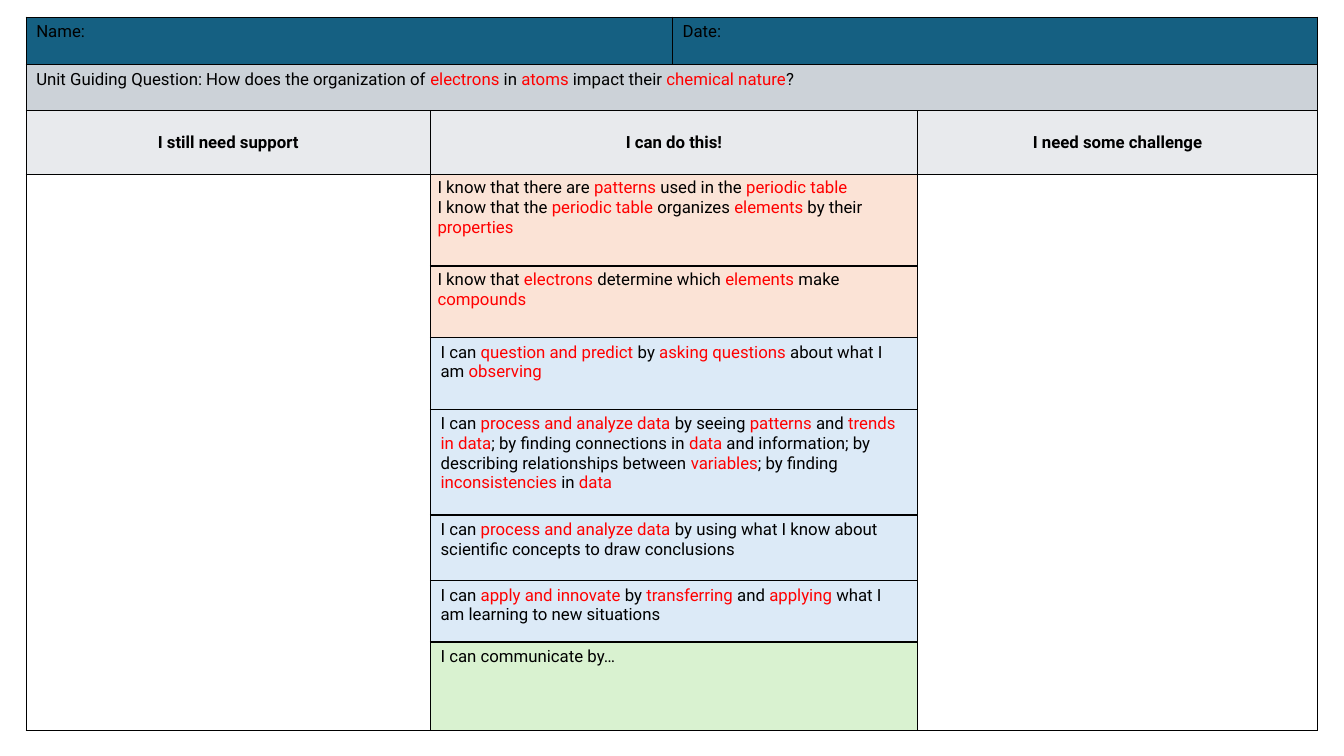
from dataclasses import dataclass

from lxml import etree
from pptx import Presentation
from pptx import util as u
from pptx.dml.color import RGBColor
from pptx.enum import text
from pptx.oxml import ns

WIDE, HIGH = 13.33, 7.5
LEFT, TOP = 0.26, 0.17
COLS = [4.01, 2.4, 2.43, 3.97]
ROWS = [0.47, 0.46, 0.63, 0.91, 0.71, 0.71, 1.05, 0.65, 0.61, 0.88]
FONT, SIZE = "Roboto", 12
BLACK, RED, WHITE = "000000", "FF0000", "FFFFFF"
BLUE, GREY, PALE = "156082", "CCD2D8", "E8EAED"
PEACH, SKY, GREEN = "FBE3D6", "DCEAF7", "D9F2D0"


@dataclass
class Box:
    """A table cell; words between asterisks are key terms in red."""
    row: int
    col: int
    fill: str
    words: str = ""
    tall: int = 1
    wide: int = 1
    head: bool = False
    tight: bool = False


# Middle column, from the first goal down
GOALS = [
    (PEACH, "I know that there are *patterns* used in the *periodic table*\n"
            "I know that the *periodic table *organizes *elements* by their *properties*"),
    (PEACH, "I know that *electrons* determine which *elements* make *compounds*"),
    (SKY, "I can *question and predict *by *asking questions *about what I am *observing*"),
    (SKY, "I can *process and analyze data *by seeing *patterns* and *trends in data*; "
          "by finding connections in *data* and information; by describing relationships "
          "between *variables*; by finding *inconsistencies* in *data*"),
    (SKY, "I can *process and analyze data* by using what I know about "
          "scientific concepts to draw conclusions"),
    (SKY, "I can *apply and innovate *by *transferring* and* applying *"
          "what I am learning to new situations"),
    (GREEN, "I can communicate by…"),
]
FIRST = len(ROWS) - len(GOALS)

BOXES = [
    Box(0, 0, BLUE, "Name:", wide=2),
    Box(0, 2, BLUE, "Date:", wide=2),
    Box(1, 0, GREY, "Unit Guiding Question: How does the organization of *electrons* in "
                    "*atoms* impact their *chemical nature*?", wide=4),
    Box(2, 0, PALE, "I still need support", head=True),
    Box(2, 1, PALE, "I can do this!", wide=2, head=True),
    Box(2, 3, PALE, "I need some challenge", head=True),
    Box(FIRST, 0, WHITE, tall=len(GOALS)),
    Box(FIRST, 3, WHITE, tall=len(GOALS)),
] + [Box(FIRST + i, 1, fill, words, wide=2, tight=fill == PEACH)
     for i, (fill, words) in enumerate(GOALS)]


def tint(code: str) -> RGBColor:
    return RGBColor.from_string(code)


def edge(cell) -> None:
    """Put a thin black line on all four sides."""
    props = cell._tc.get_or_add_tcPr()
    for side in ("lnL", "lnR", "lnT", "lnB"):
        line = etree.SubElement(props, ns.qn(f"a:{side}"), w=str(u.Pt(1)))
        paint = etree.SubElement(line, ns.qn("a:solidFill"))
        etree.SubElement(paint, ns.qn("a:srgbClr"), val=BLACK)


def write(cell, box: Box) -> None:
    frame = cell.text_frame
    for i, line in enumerate(box.words.split("\n")):
        para = frame.add_paragraph() if i else frame.paragraphs[0]
        para.font.name, para.font.size = FONT, u.Pt(SIZE)
        para.font.bold = box.head
        if box.head:
            para.alignment = text.PP_ALIGN.CENTER
        for j, part in enumerate(line.split("*")):
            if part:
                run = para.add_run()
                run.text = part
                run.font.color.rgb = tint(RED if j % 2 else BLACK)


def draw(table, box: Box) -> None:
    cell = table.cell(box.row, box.col)
    if box.tall > 1 or box.wide > 1:
        cell.merge(table.cell(box.row + box.tall - 1, box.col + box.wide - 1))
    cell.fill.solid()
    cell.fill.fore_color.rgb = tint(box.fill)
    if box.head:
        cell.vertical_anchor = text.MSO_ANCHOR.MIDDLE
    if box.tight:
        cell.margin_left = cell.margin_right = u.Inches(0.07)
        cell.margin_top = cell.margin_bottom = u.Inches(0.04)
    write(cell, box)


def main() -> None:
    deck = Presentation()
    deck.slide_width, deck.slide_height = u.Inches(WIDE), u.Inches(HIGH)
    slide = deck.slides.add_slide(deck.slide_layouts[6])

    # Grid
    table = slide.shapes.add_table(
        len(ROWS), len(COLS), u.Inches(LEFT), u.Inches(TOP),
        u.Inches(sum(COLS)), u.Inches(sum(ROWS))).table
    table.first_row = table.horz_banding = False
    for col, size in zip(table.columns, COLS):
        col.width = u.Inches(size)
    for row, size in zip(table.rows, ROWS):
        row.height = u.Inches(size)

    # Borders go in before fills
    for cell in table.iter_cells():
        edge(cell)
    for box in BOXES:
        draw(table, box)
    deck.save("out.pptx")


if __name__ == "__main__":
    main()
